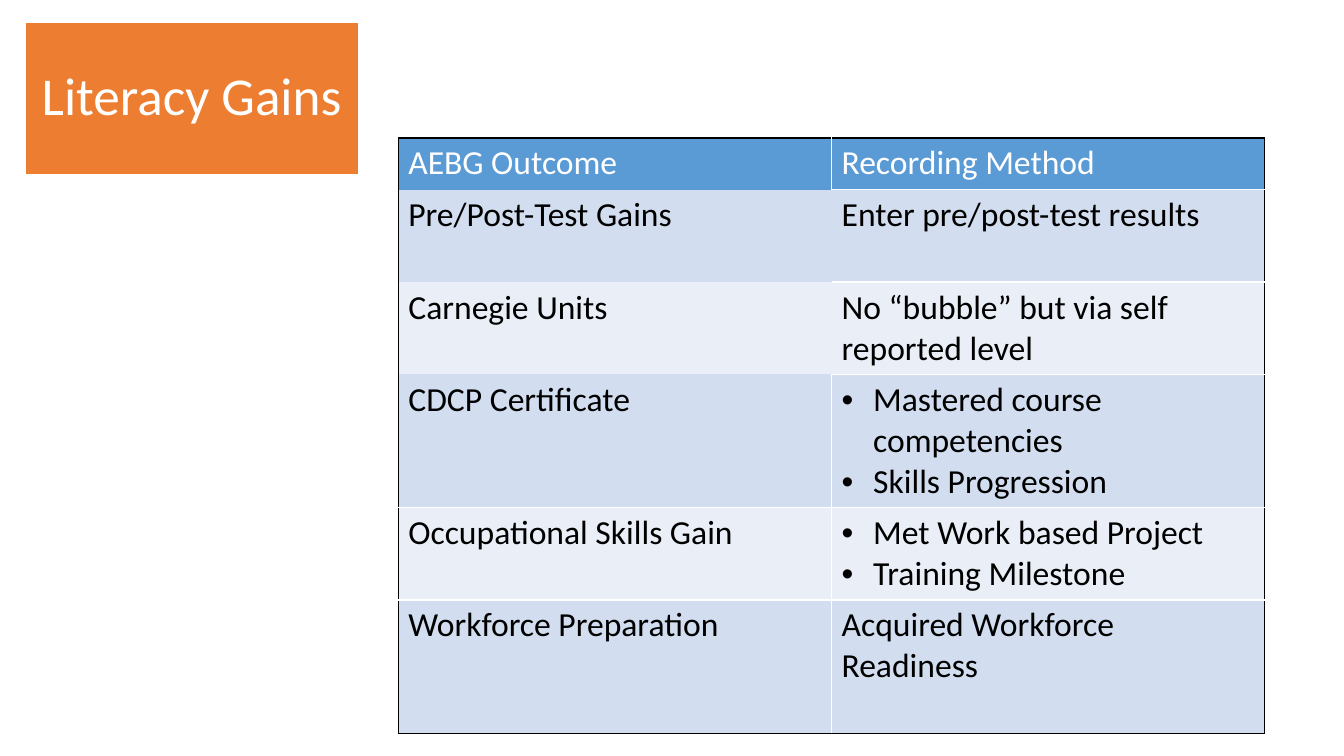
import pptx
import pptx.dml.color
import pptx.enum.text
import pptx.oxml
import pptx.oxml.ns
import pptx.util
from lxml import etree

Pt = pptx.util.Pt
qn = pptx.oxml.ns.qn

FONT = "Calibri"
WHITE, BLACK = "FFFFFF", "000000"
ORANGE, BLUE = "ED7D31", "5B9BD5"
BANDS = ("D2DEEF", "EAEFF7")
BULLET_INDENT = 22.5

# A list of texts in a cell is a bulleted list.
OUTCOMES = [
    ("AEBG Outcome", "Recording Method"),
    ("Pre/Post-Test Gains", "Enter pre/post-test results"),
    ("Carnegie Units", "No “bubble” but via self reported level"),
    ("CDCP Certificate", ["Mastered course competencies", "Skills Progression"]),
    ("Occupational Skills Gain", ["Met Work based Project", "Training Milestone"]),
    ("Workforce Preparation", "Acquired Workforce Readiness"),
]
ROW_HEIGHTS = (37, 66, 66, 95, 66, 95.5)
OPEN_ROWS = (1, 2)  # rows whose first cell has no inner borders


def rgb(color):
    return pptx.dml.color.RGBColor.from_string(color)


def set_attributes(target, values):
    for name, value in values.items():
        setattr(target, name, value)


def paint(fill, color):
    fill.solid()
    fill.fore_color.rgb = rgb(color)


def write(paragraph, text, size, color):
    run = paragraph.add_run()
    run.text = text
    set_attributes(run.font, {"name": FONT, "size": Pt(size), "bold": False})
    run.font.color.rgb = rgb(color)


def add_bullet(paragraph):
    properties = paragraph._p.get_or_add_pPr()
    properties.set("marL", str(Pt(BULLET_INDENT)))
    properties.set("indent", str(-Pt(BULLET_INDENT)))
    etree.SubElement(properties, qn("a:buFont")).set("typeface", "Arial")
    etree.SubElement(properties, qn("a:buChar")).set("char", "•")


def set_borders(cell, colors):
    """Draw the left, right, top and bottom borders; None hides one."""
    properties = cell._tc.get_or_add_tcPr()
    for index, (side, color) in enumerate(zip("LRTB", colors)):
        border = etree.Element(qn(f"a:ln{side}"), w=str(Pt(1)))
        if color:
            solid = etree.SubElement(border, qn("a:solidFill"))
            etree.SubElement(solid, qn("a:srgbClr")).set("val", color)
        else:
            etree.SubElement(border, qn("a:noFill"))
        properties.insert(index, border)


def border_colors(row, column):
    def horizontal(above):
        if above in (-1, len(OUTCOMES) - 1):
            return BLACK
        return WHITE if column == 1 or above > OPEN_ROWS[-1] else None

    divider = None if row in OPEN_ROWS else WHITE
    left, right = (BLACK, divider) if column == 0 else (divider, BLACK)
    return left, right, horizontal(row - 1), horizontal(row)


def fill_cell(cell, content, row, column):
    bulleted = isinstance(content, list)
    for index, text in enumerate(content if bulleted else [content]):
        frame = cell.text_frame
        paragraph = frame.add_paragraph() if index else frame.paragraphs[0]
        if bulleted:
            add_bullet(paragraph)
        write(paragraph, text, 24, BLACK if row else WHITE)
    paint(cell.fill, BANDS[(row - 1) % 2] if row else BLUE)
    set_borders(cell, border_colors(row, column))


def add_title(slide, text):
    title = slide.shapes.title
    set_attributes(title, {"left": Pt(18), "top": Pt(16),
                           "width": Pt(238), "height": Pt(108.5)})
    paint(title.fill, ORANGE)
    paint(title.line.fill, WHITE)
    title.line.width = Pt(1)
    set_attributes(title.text_frame, {
        "word_wrap": True,
        "auto_size": pptx.enum.text.MSO_AUTO_SIZE.NONE,
        "vertical_anchor": pptx.enum.text.MSO_ANCHOR.MIDDLE,
        "margin_left": Pt(8), "margin_right": Pt(8),
    })
    paragraph = title.text_frame.paragraphs[0]
    set_attributes(paragraph, {"alignment": pptx.enum.text.PP_ALIGN.CENTER,
                               "line_spacing": 0.9})
    write(paragraph, text, 38, WHITE)


def add_outcomes(slide):
    table = slide.shapes.add_table(
        len(OUTCOMES), 2, Pt(284.5), Pt(98.5), Pt(619), Pt(sum(ROW_HEIGHTS))).table
    table.horz_banding = False
    for row, (contents, height) in enumerate(zip(OUTCOMES, ROW_HEIGHTS)):
        table.rows[row].height = Pt(height)
        for column, content in enumerate(contents):
            fill_cell(table.cell(row, column), content, row, column)


def main():
    deck = pptx.Presentation()
    set_attributes(deck, {"slide_width": Pt(960), "slide_height": Pt(540)})
    slide = deck.slides.add_slide(deck.slide_layouts[5])
    add_title(slide, "Literacy Gains")
    add_outcomes(slide)
    deck.save("out.pptx")


if __name__ == "__main__":
    main()
